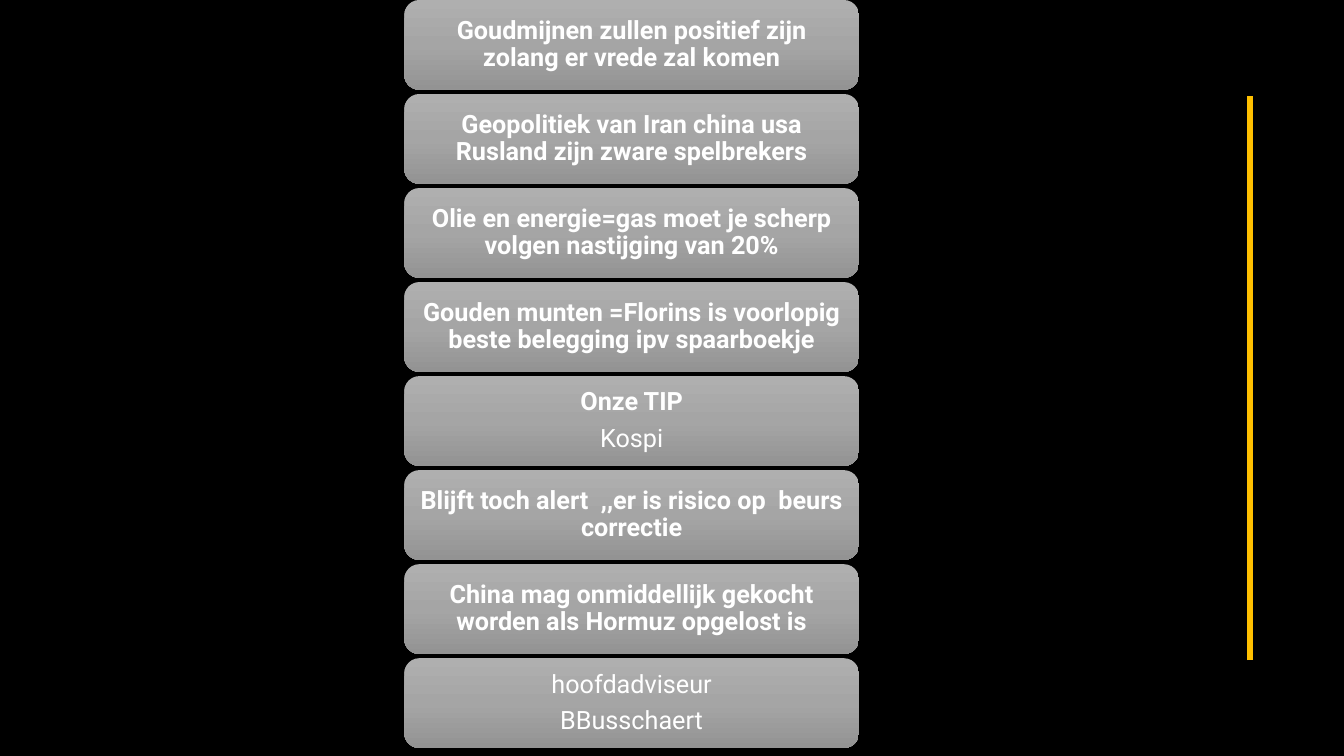
import copy

import pptx
import pptx.dml.color
import pptx.enum.shapes
import pptx.enum.text
import pptx.oxml
import pptx.util

Inches = pptx.util.Inches
Pt = pptx.util.Pt
RGBColor = pptx.dml.color.RGBColor

BLACK = RGBColor(0x00, 0x00, 0x00)
WHITE = RGBColor(0xFF, 0xFF, 0xFF)
GOLD = RGBColor(0xFF, 0xC0, 0x00)
CARD_GRADIENT = [
    (0, RGBColor(0xAF, 0xAF, 0xAF)),
    (0.5, RGBColor(0xA5, 0xA5, 0xA5)),
    (1, RGBColor(0x93, 0x93, 0x93)),
]

SLIDE_WIDTH, SLIDE_HEIGHT = Inches(13.33), Inches(7.5)
CARD_LEFT, CARD_WIDTH, CARD_HEIGHT = Inches(4.01), Inches(4.51), Inches(0.89)
LAST_CARD_TOP = Inches(6.53)
RULE_LEFT, RULE_TOP, RULE_BOTTOM = Inches(12.4), Inches(0.95), Inches(6.55)

# Each card is a list of (text, bold) paragraphs.
CARDS = [
    [("Goudmijnen zullen positief zijn zolang er vrede zal komen", True)],
    [("Geopolitiek van Iran china usa Rusland zijn zware spelbrekers", True)],
    [("Olie en energie=gas moet je scherp volgen nastijging van 20%", True)],
    [("Gouden munten =Florins is voorlopig beste belegging ipv spaarboekje", True)],
    [("Onze TIP", True), ("Kospi", False)],
    [("Blijft toch alert  ,,er is risico op  beurs correctie", True)],
    [("China mag onmiddellijk gekocht worden als Hormuz opgelost is", True)],
    [("hoofdadviseur", False), ("BBusschaert", False)],
]

FRAME_FORMAT = {
    "word_wrap": True,
    "vertical_anchor": pptx.enum.text.MSO_ANCHOR.MIDDLE,
    "margin_left": Inches(0.08),
    "margin_right": Inches(0.08),
    "margin_top": Inches(0.04),
    "margin_bottom": Inches(0.04),
}
PARAGRAPH_FORMAT = {
    "alignment": pptx.enum.text.PP_ALIGN.CENTER,
    "line_spacing": 0.9,
    "space_after": Pt(6.6),
}
FONT_FORMAT = {"name": "Roboto", "size": Pt(18)}


def apply_format(target, values):
    for name, value in values.items():
        setattr(target, name, value)


def fill_with_gradient(fill, colours):
    """Fill from top to bottom with any number of (position, colour) stops."""
    fill.gradient()
    fill.gradient_angle = 270
    stops = fill.gradient_stops
    first_stop = stops[0]._gs
    for _ in range(len(colours) - len(stops)):
        first_stop.addnext(copy.deepcopy(first_stop))
    for stop, (position, colour) in zip(fill.gradient_stops, colours):
        stop.position = position
        stop.color.rgb = colour


def add_card(slide, top, lines):
    shape = slide.shapes.add_shape(
        pptx.enum.shapes.MSO_SHAPE.ROUNDED_RECTANGLE,
        CARD_LEFT, top, CARD_WIDTH, CARD_HEIGHT)
    shape.shadow.inherit = False
    shape.line.fill.background()
    fill_with_gradient(shape.fill, CARD_GRADIENT)
    frame = shape.text_frame
    apply_format(frame, FRAME_FORMAT)
    for index, (text, bold) in enumerate(lines):
        paragraph = frame.add_paragraph() if index else frame.paragraphs[0]
        apply_format(paragraph, PARAGRAPH_FORMAT)
        run = paragraph.add_run()
        run.text = text
        apply_format(run.font, FONT_FORMAT)
        run.font.bold = bold
        run.font.color.rgb = WHITE


def add_vertical_rule(slide):
    rule = slide.shapes.add_connector(
        pptx.enum.shapes.MSO_CONNECTOR.STRAIGHT,
        RULE_LEFT, RULE_BOTTOM, RULE_LEFT, RULE_TOP)
    rule.line.color.rgb = GOLD
    rule.line.width = Pt(4.5)
    properties = rule._element.spPr
    properties.append(properties.makeelement(pptx.oxml.ns.qn("a:effectLst"), {}))


def main():
    presentation = pptx.Presentation()
    presentation.slide_width = SLIDE_WIDTH
    presentation.slide_height = SLIDE_HEIGHT
    slide = presentation.slides.add_slide(presentation.slide_layouts[6])
    slide.background.fill.solid()
    slide.background.fill.fore_color.rgb = BLACK

    add_vertical_rule(slide)
    for row, lines in enumerate(CARDS):
        add_card(slide, LAST_CARD_TOP * row // (len(CARDS) - 1), lines)
    presentation.save("out.pptx")


if __name__ == "__main__":
    main()
